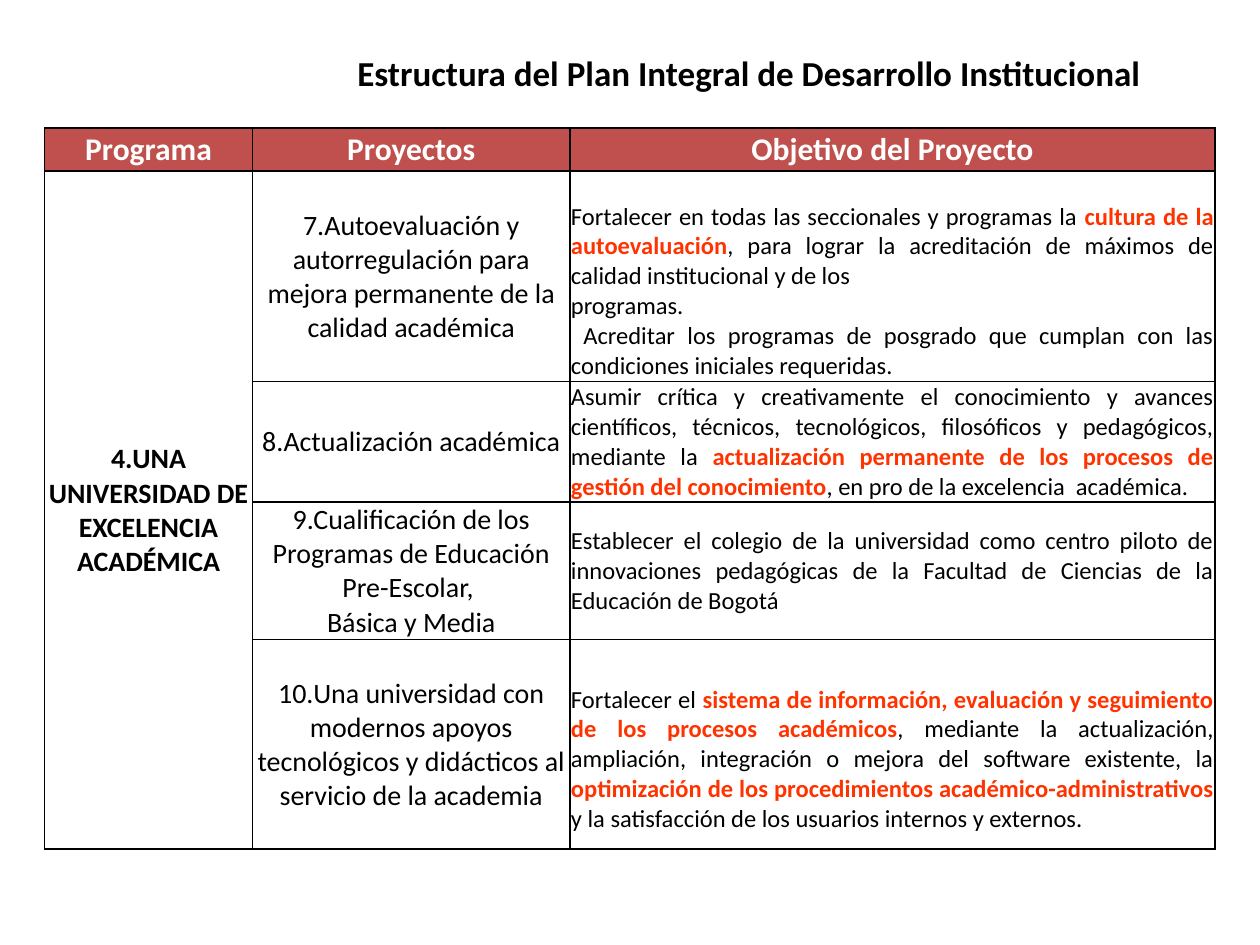
from lxml.etree import fromstring
from pptx import Presentation
from pptx.dml.color import RGBColor
from pptx.enum.text import MSO_ANCHOR, PP_ALIGN
from pptx.oxml.ns import nsdecls
from pptx.util import Cm, Pt

BLACK, WHITE, HEADER_RED, HIGHLIGHT = "000000", "FFFFFF", "C0504D", "FF3300"


def write_text(frame, text, size=16, color=BLACK, bold=False, align=PP_ALIGN.CENTER):
    """Put each line in a paragraph; parts between asterisks are highlighted."""
    frame.word_wrap = True
    for number, line in enumerate(text.split("\n")):
        paragraph = frame.paragraphs[0] if number == 0 else frame.add_paragraph()
        paragraph.alignment = align
        for part_number, part in enumerate(line.split("*")):
            if not part:
                continue
            highlighted = part_number % 2 == 1
            run = paragraph.add_run()
            run.text = part
            run.font.name = "Calibri"
            run.font.size = Pt(size)
            run.font.bold = bold or highlighted
            run.font.color.rgb = RGBColor.from_string(HIGHLIGHT if highlighted else color)


def format_cell(cell, fill):
    """Set fill, narrow margins, middle anchor and black borders."""
    cell.fill.solid()
    cell.fill.fore_color.rgb = RGBColor.from_string(fill)
    cell.vertical_anchor = MSO_ANCHOR.MIDDLE
    cell.margin_left = cell.margin_right = cell.margin_top = Cm(0.02)
    cell.margin_bottom = Cm(0)
    properties = cell._tc.get_or_add_tcPr()
    for position, side in enumerate(("lnL", "lnR", "lnT", "lnB")):
        properties.insert(position, fromstring(
            f'<a:{side} {nsdecls("a")} w="12700"><a:solidFill>'
            f'<a:srgbClr val="{BLACK}"/></a:solidFill></a:{side}>'))


headings = ["Programa", "Proyectos", "Objetivo del Proyecto"]
program = "4.UNA UNIVERSIDAD DE EXCELENCIA ACADÉMICA"
# Project, objective, top margin of the objective in cm
projects = [
    ("7.Autoevaluación y autorregulación para mejora permanente de la calidad académica",
     "Fortalecer en todas las seccionales y programas la *cultura de la autoevaluación*, "
     "para lograr la acreditación de máximos de calidad institucional y de los \n"
     "programas.\n"
     " Acreditar los programas de posgrado que cumplan con las condiciones iniciales requeridas.",
     0.6),
    ("8.Actualización académica",
     "Asumir crítica y creativamente el conocimiento y avances científicos, técnicos, "
     "tecnológicos, filosóficos y pedagógicos, mediante la *actualización permanente de los "
     "procesos de gestión del conocimiento*, en pro de la excelencia  académica.",
     0.02),
    ("9.Cualificación de los Programas de Educación Pre-Escolar, \nBásica y Media",
     "Establecer el colegio de la universidad como centro piloto de innovaciones "
     "pedagógicas de la Facultad de Ciencias de la Educación de Bogotá",
     0.02),
    ("10.Una universidad con modernos apoyos tecnológicos y didácticos al servicio de la academia",
     "Fortalecer el *sistema de información, evaluación y seguimiento de los procesos "
     "académicos*, mediante la actualización, ampliación, integración o mejora del software "
     "existente, la *optimización de los procedimientos académico-administrativos* y la "
     "satisfacción de los usuarios internos y externos.",
     0.6),
]
column_widths = [4.19, 6.4, 13]
row_heights = [0.87, 4.24, 2.42, 2.78, 4.22]

presentation = Presentation()
presentation.slide_width, presentation.slide_height = Cm(25.4), Cm(19.05)
slide = presentation.slides.add_slide(presentation.slide_layouts[6])

table = slide.shapes.add_table(
    len(row_heights), len(column_widths), Cm(0.9), Cm(2.58),
    Cm(sum(column_widths)), Cm(sum(row_heights))).table
table.first_row = table.horz_banding = False
for column, width in zip(table.columns, column_widths):
    column.width = Cm(width)
for row_number, (row, height) in enumerate(zip(table.rows, row_heights)):
    row.height = Cm(height)
    for cell in row.cells:
        format_cell(cell, WHITE if row_number else HEADER_RED)

for cell, heading in zip(table.rows[0].cells, headings):
    write_text(cell.text_frame, heading, size=18, color=WHITE, bold=True)

program_cell = table.cell(1, 0)
program_cell.merge(table.cell(len(projects), 0))
write_text(program_cell.text_frame, program, bold=True)

for row_number, (project, objective, top_margin) in enumerate(projects, start=1):
    write_text(table.cell(row_number, 1).text_frame, project)
    objective_cell = table.cell(row_number, 2)
    objective_cell.margin_top = Cm(top_margin)
    write_text(objective_cell.text_frame, objective, size=14, align=PP_ALIGN.JUSTIFY)

title = slide.shapes.add_textbox(Cm(5.5), Cm(0.92), Cm(19.2), Cm(1.47))
write_text(title.text_frame, "Estructura del Plan Integral de Desarrollo Institucional",
           size=20, bold=True)

presentation.save("out.pptx")
